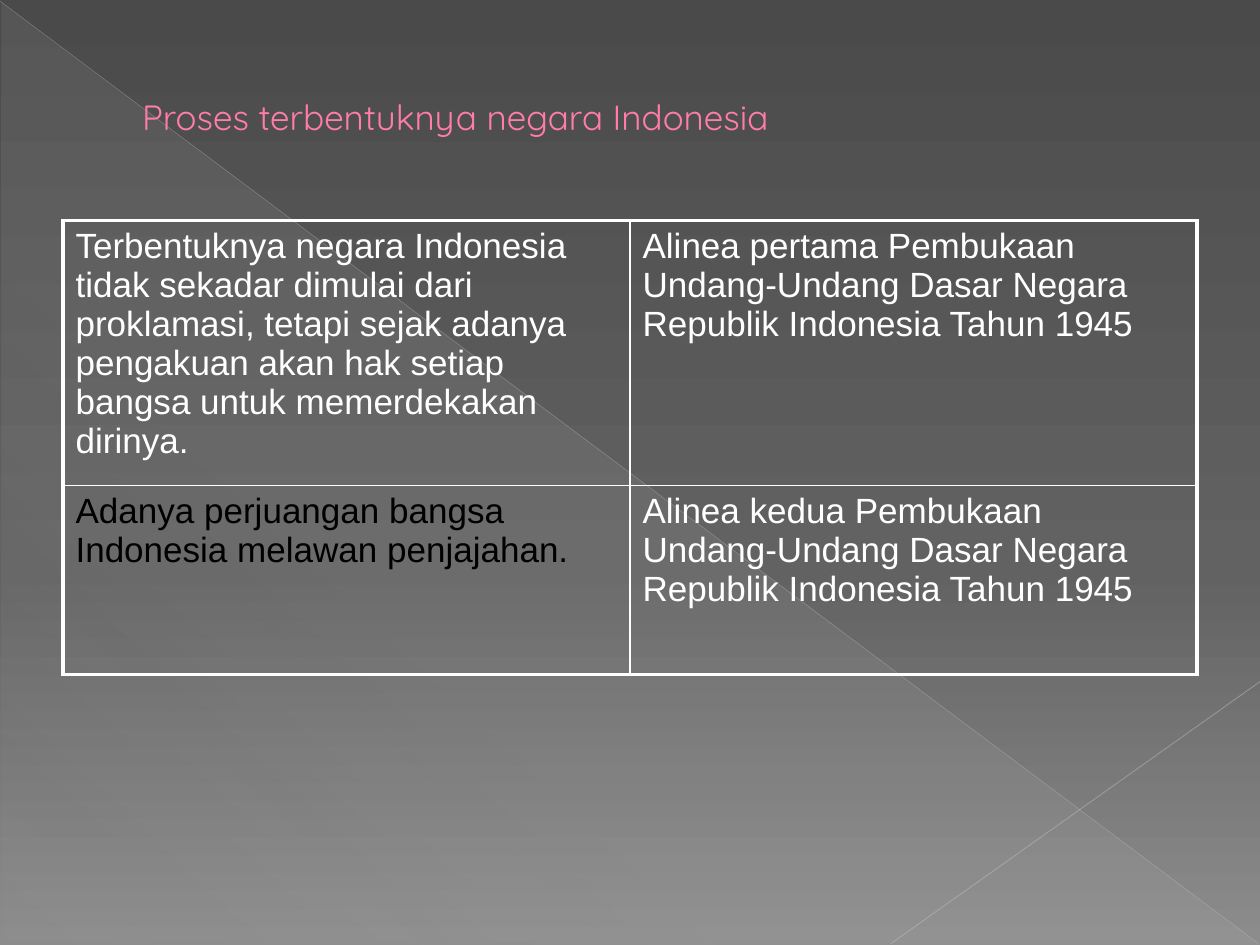
from lxml import etree
from pptx import Presentation
from pptx.dml.color import RGBColor
from pptx.enum.shapes import MSO_CONNECTOR, MSO_SHAPE
from pptx.enum.text import MSO_ANCHOR
from pptx.oxml.ns import qn
from pptx.util import Inches, Pt

STRAIGHT = MSO_CONNECTOR.STRAIGHT
RIGHT_TRIANGLE = MSO_SHAPE.RIGHT_TRIANGLE
MIDDLE = MSO_ANCHOR.MIDDLE

WHITE = RGBColor(0xFF, 0xFF, 0xFF)
BLACK = RGBColor(0x00, 0x00, 0x00)
PINK = RGBColor(0xFF, 0x7D, 0xA7)
DARK_PINK = RGBColor(0xB1, 0x27, 0x61)
CHARCOAL = RGBColor(0x4A, 0x4A, 0x4A)
GREY = RGBColor(0x62, 0x62, 0x62)
LIGHT_GREY = RGBColor(0x8C, 0x8C, 0x8C)
PALE = RGBColor(0xD2, 0xD2, 0xD2)
SILVER = RGBColor(0xBF, 0xBF, 0xBF)
PALE_SILVER = RGBColor(0xC6, 0xC6, 0xC6)

TITLE = "Proses terbentuknya negara Indonesia"
ROWS = [
    [("Terbentuknya negara Indonesia tidak sekadar dimulai dari proklamasi, "
      "tetapi sejak adanya pengakuan akan hak setiap bangsa untuk "
      "memerdekakan dirinya.", WHITE),
     ("Alinea pertama Pembukaan Undang-Undang Dasar Negara Republik "
      "Indonesia Tahun 1945", WHITE)],
    [("Adanya perjuangan bangsa Indonesia melawan penjajahan.", BLACK),
     ("Alinea kedua Pembukaan Undang-Undang Dasar Negara Republik "
      "Indonesia Tahun 1945", WHITE)],
]


def add_color(parent, color, opacity=100):
    node = etree.SubElement(parent, qn("a:srgbClr"), val=str(color))
    if opacity < 100:
        etree.SubElement(node, qn("a:alpha"), val=str(opacity * 1000))


def add_solid(parent, color):
    add_color(etree.SubElement(parent, qn("a:solidFill")), color)


class SlideBuilder:
    thin, thick = Pt(1), Pt(2.25)
    text_size = Pt(20)

    def __init__(self, slide):
        self.slide = slide

    def gradient(self, owner, element, stops, clockwise):
        owner.fill.gradient()
        owner.fill.gradient_angle = 360 - clockwise
        stop_list = next(element.iter(qn("a:gsLst")))
        for old_stop in list(stop_list):
            stop_list.remove(old_stop)
        for position, color, opacity in stops:
            stop = etree.SubElement(stop_list, qn("a:gs"), pos=str(position * 1000))
            add_color(stop, color, opacity)

    def background(self, stops):
        self.gradient(self.slide.background, self.slide.element, stops, 90)

    def triangle(self, left, top, width, height, stops):
        shape = self.slide.shapes.add_shape(
            RIGHT_TRIANGLE, Inches(left), Inches(top), Inches(width), Inches(height))
        shape.shadow.inherit = False
        shape.line.fill.background()
        self.gradient(shape, shape.element.spPr, stops, 133)

    def line(self, start, end, color, width, opacity):
        points = [Inches(value) for value in (*start, *end)]
        connector = self.slide.shapes.add_connector(STRAIGHT, *points)
        connector.line.width = Pt(width)
        connector.line.color.rgb = color
        color_node = next(connector.element.spPr.iter(qn("a:srgbClr")))
        etree.SubElement(color_node, qn("a:alpha"), val=str(opacity * 1000))
        etree.SubElement(connector.element.spPr, qn("a:effectLst"))

    def add_span(self, para, text, font, color):
        span = para.add_run()
        span.text = text
        for name, value in {"name": font, "size": self.text_size}.items():
            setattr(span.font, name, value)
        span.font.color.rgb = color
        return span

    def title(self, left, top, width, height, text):
        box = self.slide.shapes.add_textbox(
            Inches(left), Inches(top), Inches(width), Inches(height))
        frame = box.text_frame
        for name, value in {"word_wrap": True, "vertical_anchor": MIDDLE}.items():
            setattr(frame, name, value)
        para = frame.paragraphs[0]
        para._p.get_or_add_pPr().set("marL", str(Inches(0.53)))
        span = self.add_span(para, text, "Quicksand", PINK)
        outline = etree.Element(qn("a:ln"), w=str(Pt(0.5)))
        add_solid(outline, DARK_PINK)
        span._r.get_or_add_rPr().insert(0, outline)

    def borders(self, cell, outer_sides):
        properties = cell._tc.get_or_add_tcPr()
        for index, side in enumerate("LRTB"):
            width = self.thick if side in outer_sides else self.thin
            border = etree.Element(qn(f"a:ln{side}"), w=str(width))
            add_solid(border, WHITE)
            properties.insert(index, border)

    def table(self, left, top, widths, heights, rows):
        table = self.slide.shapes.add_table(
            len(heights), len(widths), Inches(left), Inches(top),
            Inches(sum(widths)), Inches(sum(heights))).table
        for name in ("first_row", "horz_banding"):
            setattr(table, name, False)
        for column, width in zip(table.columns, widths):
            column.width = Inches(width)
        for row, height in zip(table.rows, heights):
            row.height = Inches(height)
        for row_index, row in enumerate(rows):
            for column_index, (text, color) in enumerate(row):
                cell = table.cell(row_index, column_index)
                cell.fill.background()
                self.add_span(cell.text_frame.paragraphs[0], text, "Arial", color)
                self.borders(cell, "LR"[column_index] + "TB"[row_index])


def main():
    deck = Presentation()
    deck.slide_width, deck.slide_height = Inches(10), Inches(7.5)
    page = SlideBuilder(deck.slides.add_slide(deck.slide_layouts[6]))
    page.background([(0, CHARCOAL, 100), (60, GREY, 100), (100, LIGHT_GREY, 100)])
    page.triangle(0.01, 0.02, 9.99, 7.48, [(0, PALE, 10), (70, PALE, 8), (100, PALE, 1)])
    page.line((0, 0.01), (9.99, 7.49), SILVER, 0.39, 35)
    page.line((10, 5.41), (7.07, 7.49), PALE_SILVER, 0.47, 45)
    page.title(0.5, 0.3, 9, 1.25, TITLE)
    page.table(0.5, 1.75, [4.5, 4.5], [2.1, 1.5], ROWS)
    deck.save("out.pptx")


if __name__ == "__main__":
    main()
